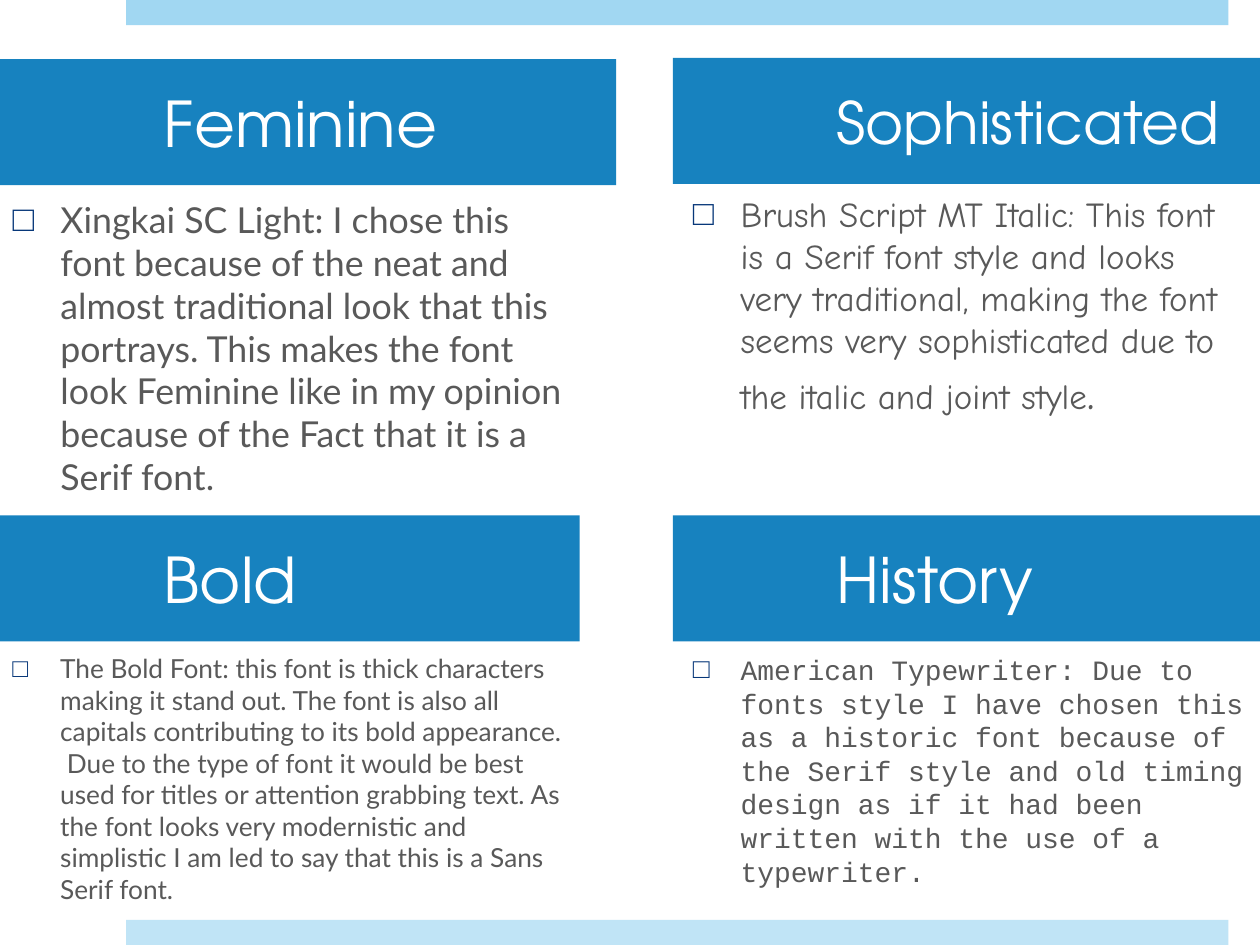
import pptx
import pptx.util
import pptx.dml.color
import pptx.enum.shapes
import pptx.enum.text
import pptx.oxml.ns
from lxml import etree

WIDTH, HEIGHT = 10, 7.5
HEADING_LEFTS = (0, 5.34)
BODY_LEFTS = (0, 5.4)
LOWER_HEADING_TOP, LOWER_BODY_TOP = 4.09, 5.13
HEADING_HEIGHT, BODY_WIDTH, BODY_HEIGHT = 1, 4.6, 3.01
BAR_LEFT, BAR_WIDTH, BAR_HEIGHT = 1, 8.75, 0.2
INDENT = 0.38
HEADING_FONT = "TeX Gyre Adventor"
BLUE, WHITE, GREY, NAVY = "1782BF", "FFFFFF", "595959", "073779"

BARS = [(0, "A1D7F2"), (HEIGHT - BAR_HEIGHT, "C0E4F6")]

PANELS = [
    {
        "heading": "Feminine", "heading_size": 36, "column": 0,
        "heading_top": 0.47, "heading_width": 4.89,
        "body_top": 1.52, "body_height": 2.38, "font": "Lato",
        "spans": [("Xingkai SC Light: I chose this font because of the neat and almost "
                   "traditional look that this portrays. This makes the font look Feminine "
                   "like in my opinion because of the Fact that it is a Serif font.", 20.4)],
    },
    {
        "heading": "Sophisticated", "heading_size": 33.3, "column": 1,
        "heading_top": 0.46, "heading_width": 4.68,
        "body_top": 1.48, "body_height": BODY_HEIGHT, "font": "Comic Neue",
        "spans": [("Brush Script MT Italic: This font is a Serif font style and looks very "
                   "traditional, making the font seems very sophisticated due to the italic "
                   "and joint style", 20), (".", 28)],
    },
    {
        "heading": "Bold", "heading_size": 36, "column": 0,
        "heading_top": LOWER_HEADING_TOP, "heading_width": 4.6,
        "body_top": LOWER_BODY_TOP, "body_height": BODY_HEIGHT, "font": "Lato",
        "spans": [("The Bold Font: this font is thick characters making it stand out. The font "
                   "is also all capitals contributing to its bold appearance.  Due to the type "
                   "of font it would be best used for titles or attention grabbing text. As the "
                   "font looks very modernistic and simplistic I am led to say that this is a "
                   "Sans Serif font.", 15)],
    },
    {
        "heading": "History", "heading_size": 36, "column": 1,
        "heading_top": LOWER_HEADING_TOP, "heading_width": 4.68,
        "body_top": LOWER_BODY_TOP, "body_height": BODY_HEIGHT, "font": "Courier New",
        "spans": [("American Typewriter: Due to fonts style I have chosen this as a historic "
                   "font because of the Serif style and old timing design as if it had been "
                   "written with the use of a typewriter.", 16)],
    },
]


def color(value):
    return pptx.dml.color.RGBColor.from_string(value)


def inches(*values):
    return [pptx.util.Inches(value) for value in values]


def place(box, *area):
    box.left, box.top, box.width, box.height = inches(*area)


def fill_box(box, value):
    box.fill.solid()
    box.fill.fore_color.rgb = color(value)
    box.line.fill.background()


def add_rectangle(page):
    box = page.shapes.add_shape(pptx.enum.shapes.MSO_SHAPE.RECTANGLE, *inches(0, 0, 1, 1))
    box.shadow.inherit = False
    return box


def add_bullet(para):
    para.space_before = pptx.util.Pt(20)
    qn = pptx.oxml.ns.qn
    properties = para._p.get_or_add_pPr()
    properties.set("marL", str(pptx.util.Inches(INDENT)))
    properties.set("indent", str(-pptx.util.Inches(INDENT)))
    bullet_color = etree.SubElement(properties, qn("a:buClr"))
    etree.SubElement(bullet_color, qn("a:srgbClr"), val=NAVY)
    etree.SubElement(properties, qn("a:buFont"), typeface="Arial")
    etree.SubElement(properties, qn("a:buChar"), char="□")


def write(box, spans, font, ink, anchor, margins=(0.1, 0.05, 0.1, 0.05), bullet=False):
    frame = box.text_frame
    frame.word_wrap = True
    frame.auto_size = pptx.enum.text.MSO_AUTO_SIZE.NONE
    frame.vertical_anchor = anchor
    (frame.margin_left, frame.margin_top,
     frame.margin_right, frame.margin_bottom) = inches(*margins)
    para = frame.paragraphs[0]
    para.alignment = pptx.enum.text.PP_ALIGN.LEFT
    if bullet:
        add_bullet(para)
    for text, size in spans:
        span = para.add_run()
        span.text = text
        span.font.name = font
        span.font.size = pptx.util.Pt(size)
        span.font.color.rgb = color(ink)


def add_panel(page, panel, heading, body):
    column = panel["column"]
    place(heading, HEADING_LEFTS[column], panel["heading_top"],
          panel["heading_width"], HEADING_HEIGHT)
    fill_box(heading, BLUE)
    write(heading, [(panel["heading"], panel["heading_size"])], HEADING_FONT, WHITE,
          pptx.enum.text.MSO_ANCHOR.MIDDLE, margins=(1.3, 0.05, 0.3, 0.05))
    place(body, BODY_LEFTS[column], panel["body_top"], BODY_WIDTH, panel["body_height"])
    write(body, panel["spans"], panel["font"], GREY,
          pptx.enum.text.MSO_ANCHOR.TOP, bullet=True)


def main():
    deck = pptx.Presentation()
    deck.slide_width, deck.slide_height = inches(WIDTH, HEIGHT)
    page = deck.slides.add_slide(deck.slide_layouts[1])
    for top, value in BARS:
        bar = add_rectangle(page)
        place(bar, BAR_LEFT, top, BAR_WIDTH, BAR_HEIGHT)
        fill_box(bar, value)
    add_panel(page, PANELS[0], page.shapes.title, page.placeholders[1])
    for panel in PANELS[1:]:
        body = page.shapes.add_textbox(*inches(0, 0, 1, 1))
        add_panel(page, panel, add_rectangle(page), body)
    deck.save("out.pptx")


if __name__ == "__main__":
    main()
